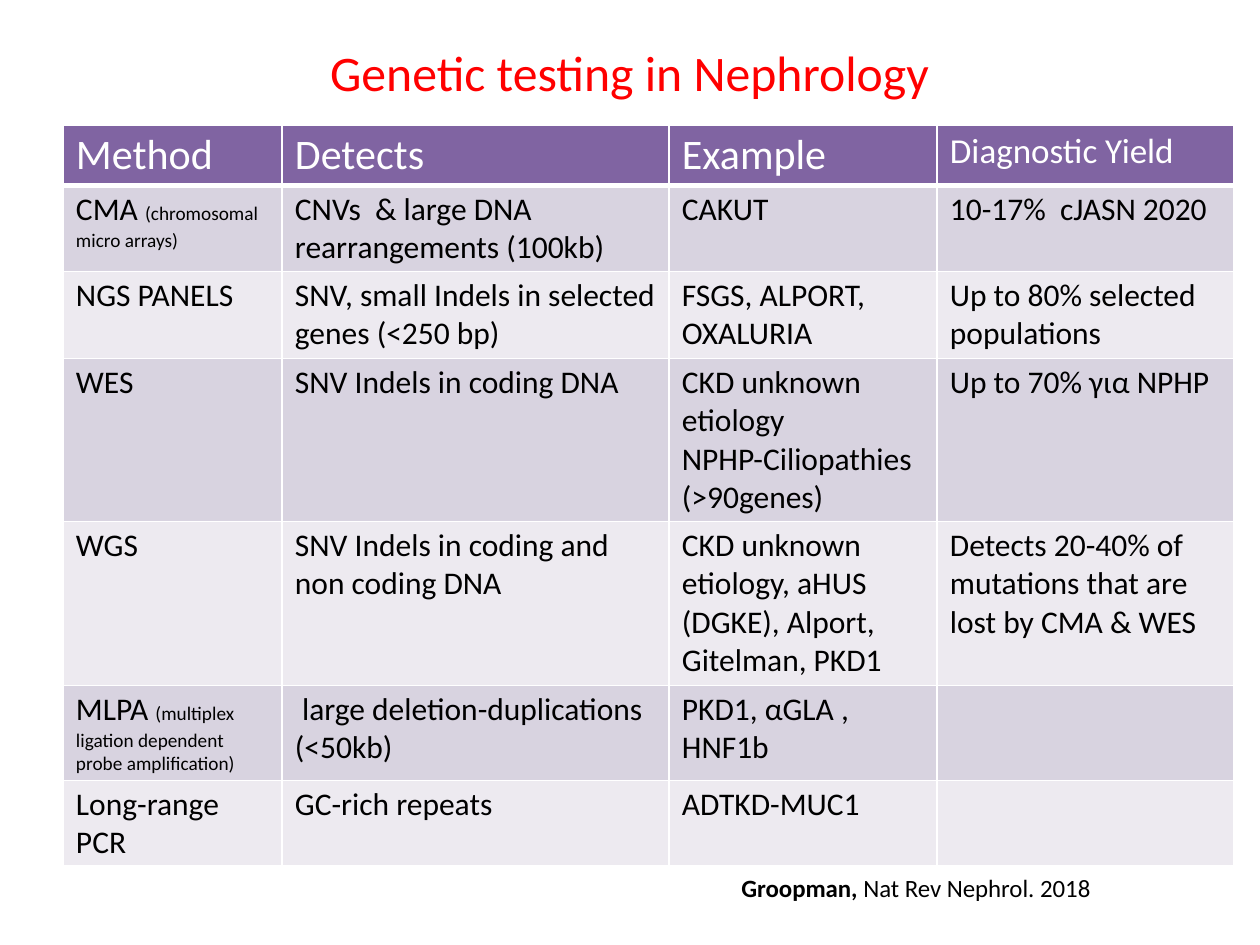
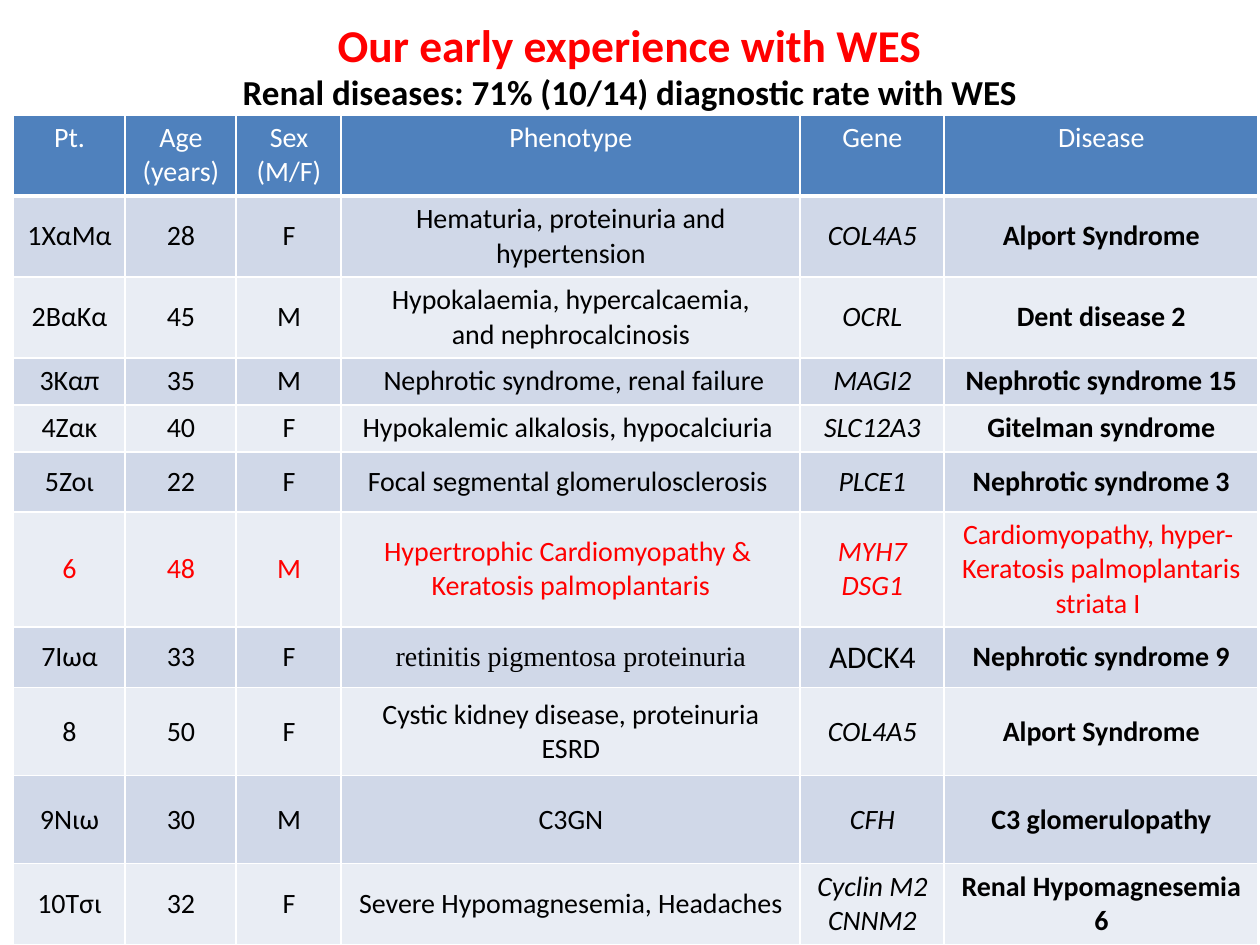
"""Build two slides of tables on genetic testing in nephrology."""

from dataclasses import dataclass, replace

from lxml.etree import SubElement
from pptx import Presentation
from pptx.dml.color import RGBColor
from pptx.enum.text import MSO_ANCHOR as Anchor, PP_ALIGN as Align
from pptx.oxml.ns import qn
from pptx.util import Emu, Pt

PX = 914400 / 126
RED = RGBColor(0xFF, 0x00, 0x00)
BLACK = RGBColor(0x00, 0x00, 0x00)
WHITE = RGBColor(0xFF, 0xFF, 0xFF)
PURPLE = RGBColor(0x80, 0x64, 0xA2)
PURPLE_BANDS = (RGBColor(0xD8, 0xD3, 0xE0), RGBColor(0xED, 0xEA, 0xF0))
BLUE = RGBColor(0x4F, 0x81, 0xBD)
BLUE_BANDS = (RGBColor(0xD0, 0xD8, 0xE8), RGBColor(0xE9, 0xED, 0xF4))
SANS = "Calibri"
SERIF = "Times New Roman"


@dataclass(frozen=True)
class Cell:
    """Text of a table cell, its format and an optional small note."""

    text: str
    size: float = 18
    color: RGBColor = BLACK
    bold: bool = False
    italic: bool = False
    font: str = SANS
    note: str = ""


@dataclass(frozen=True)
class TableStyle:
    """Look and geometry of a banded table."""

    left: int
    top: int
    columns: tuple[int, ...]
    heights: tuple[int, ...]
    header: RGBColor
    bands: tuple[RGBColor, RGBColor]
    inset: int
    align: Align = Align.LEFT
    anchor: Anchor = Anchor.TOP


@dataclass(frozen=True)
class Patient:
    """One diagnosed patient."""

    label: str
    age: int
    sex: str
    phenotype: str
    gene: str
    disease: str


def px(length: int) -> Emu:
    """Turn pixels into EMU."""
    return Emu(round(length * PX))


def write(frame, text: str, *, size: float, color: RGBColor = BLACK, bold: bool = False,
          italic: bool = False, font: str = SANS, align: Align = Align.LEFT,
          append: bool = False) -> None:
    """Write one paragraph per line, or append a span to the last paragraph."""
    for index, line in enumerate(text.split("\n")):
        para = frame.add_paragraph() if index else frame.paragraphs[-1]
        if not append:
            para.alignment = align
        span = para.add_run()
        span.text = line
        span.font.name = font
        span.font.size = Pt(size)
        span.font.bold = bold
        span.font.italic = italic
        span.font.color.rgb = color


def add_box(page, left: int, top: int, width: int, height: int, *,
            anchor: Anchor = Anchor.TOP, wrap: bool = True):
    """Add a text box and return its text frame."""
    frame = page.shapes.add_textbox(px(left), px(top), px(width), px(height)).text_frame
    frame.word_wrap = wrap
    frame.vertical_anchor = anchor
    return frame


def add_borders(cell, bottom: int) -> None:
    """Draw white borders around a cell."""
    properties = cell._tc.get_or_add_tcPr()
    for side, width in (("L", 1), ("R", 1), ("T", 1), ("B", bottom)):
        line = SubElement(properties, qn(f"a:ln{side}"), w=str(Pt(width)))
        fill = SubElement(line, qn("a:solidFill"))
        SubElement(fill, qn("a:srgbClr"), val=str(WHITE))


def add_table(page, style: TableStyle, rows: list[list[Cell]]) -> None:
    """Draw a table with a header row and alternating bands."""
    table = page.shapes.add_table(
        len(rows), len(style.columns), px(style.left), px(style.top),
        px(sum(style.columns)), px(sum(style.heights))).table
    for column, width in zip(table.columns, style.columns):
        column.width = px(width)
    for index, (row, height, entries) in enumerate(zip(table.rows, style.heights, rows)):
        row.height = px(height)
        for cell, entry in zip(row.cells, entries):
            add_borders(cell, 1 if index else 3)
            cell.fill.solid()
            cell.fill.fore_color.rgb = style.bands[(index - 1) % 2] if index else style.header
            cell.margin_left, cell.margin_right = px(13), px(12)
            cell.margin_top = cell.margin_bottom = px(style.inset)
            cell.vertical_anchor = style.anchor if index else Anchor.TOP
            if entry.text:
                write(cell.text_frame, entry.text, size=entry.size, color=entry.color,
                      bold=entry.bold, italic=entry.italic, font=entry.font, align=style.align)
            if entry.note:
                write(cell.text_frame, entry.note, size=11, append=True)


METHOD_STYLE = TableStyle(
    63, 125, (219, 387, 268, 297), (60, 86, 87, 163, 164, 95, 86), PURPLE, PURPLE_BANDS, 5)
METHOD_HEADER = [Cell(name, 24, WHITE) for name in ("Method", "Detects", "Example")]
METHOD_HEADER.append(Cell("Diagnostic Yield", 20, WHITE))
METHOD_NOTES = {
    "CMA ": "(chromosomal micro arrays)",
    "MLPA ": "(multiplex ligation dependent probe amplification)",
}
METHODS = (
    ("CMA ", "CNVs  & large DNA rearrangements (100kb)", "CAKUT", "10-17%  cJASN 2020"),
    ("NGS PANELS", "SNV, small Indels in selected genes (<250 bp)",
     "FSGS, ALPORT, OXALURIA", "Up to 80% selected populations"),
    ("WES", "SNV Indels in coding DNA",
     "CKD unknown etiology\nNPHP-Ciliopathies (>90genes)", "Up to 70% για ΝPHP"),
    ("WGS", "SNV Indels in coding and non coding DNA",
     "CKD unknown etiology, aHUS (DGKE), Alport, Gitelman, PKD1",
     "Detects 20-40% of mutations that are lost by CMA & WES"),
    ("MLPA ", " large deletion-duplications (<50kb)", "PKD1, αGLA , HNF1b", ""),
    ("Long-range PCR", "GC-rich repeats", "ADTKD-MUC1", ""),
)

PATIENT_STYLE = TableStyle(
    13, 115, (112, 111, 105, 459, 144, 314), (81, 81, 81, 47, 47, 60, 115, 61, 88, 88, 81),
    BLUE, BLUE_BANDS, 6, Align.CENTER, Anchor.MIDDLE)
PATIENT_HEADER = [
    Cell(name, 16, WHITE)
    for name in ("Pt.", "Age (years)", "Sex (M/F)", "Phenotype", "Gene", "Disease")]
PATIENTS = (
    Patient("1ΧαΜα", 28, "F", "Hematuria, proteinuria and hypertension", "COL4A5",
            "Alport Syndrome"),
    Patient("2ΒαΚα", 45, "Μ", "Hypokalaemia, hypercalcaemia,\nand nephrocalcinosis", "OCRL",
            "Dent disease 2"),
    Patient("3Καπ", 35, "M", " Nephrotic syndrome, renal failure", "MAGI2",
            "Nephrotic syndrome 15"),
    Patient("4Ζακ", 40, "F", "Hypokalemic alkalosis, hypocalciuria ", "SLC12A3",
            "Gitelman syndrome"),
    Patient("5Ζοι", 22, "F", "Focal segmental glomerulosclerosis ", "PLCE1",
            "Nephrotic syndrome 3"),
    Patient("6", 48, "M", "Hypertrophic Cardiomyopathy & \nKeratosis palmoplantaris",
            "MYH7\nDSG1", "Cardiomyopathy, hyper- \nKeratosis palmoplantaris striata I "),
    Patient("7Ιωα", 33, "F", "retinitis pigmentosa proteinuria", "ADCK4",
            "Nephrotic syndrome 9"),
    Patient("8", 50, "F", "Cystic kidney disease, proteinuria ESRD", "COL4A5",
            "Alport Syndrome"),
    Patient("9Νιω", 30, "M", "C3GN", "CFH", "C3 glomerulopathy"),
    Patient("10Τσι", 32, "F", "Severe Hypomagnesemia, Headaches", "Cyclin M2 CNNM2",
            "Renal Hypomagnesemia 6"),
)


def patient_row(patient: Patient) -> list[Cell]:
    """Format a patient, with the cardiac case in red and ADCK4 set apart."""
    cardiac = patient.label == "6"
    base = Cell("", 16, RED if cardiac else BLACK)
    texts = (patient.label, str(patient.age), patient.sex, patient.phenotype)
    row = [replace(base, text=text) for text in texts]
    row.append(replace(base, text=patient.gene, italic=True))
    row.append(replace(base, text=patient.disease, bold=not cardiac))
    if patient.gene == "ADCK4":
        row[3] = replace(row[3], font=SERIF)
        row[4] = replace(row[4], size=18, italic=False)
    return row


def add_methods_page(page) -> None:
    """Compare the testing methods."""
    title = add_box(page, 63, 38, 1134, 68, anchor=Anchor.MIDDLE)
    write(title, "Genetic testing in Nephrology", size=28.4, color=RED, align=Align.CENTER)
    rows = [[Cell(text, note=METHOD_NOTES.get(text, "")) for text in row] for row in METHODS]
    add_table(page, METHOD_STYLE, [METHOD_HEADER, *rows])
    citation = add_box(page, 729, 866, 377, 42, wrap=False)
    write(citation, "Groopman, ", size=14.2, bold=True)
    write(citation, "Nat Rev Nephrol. 2018", size=14.2, append=True)


def add_patients_page(page) -> None:
    """List the diagnosed patients."""
    title = add_box(page, 0, 11, 1260, 68)
    write(title, "Our early experience with WES", size=26, color=RED, bold=True,
          align=Align.CENTER)
    subtitle = add_box(page, 0, 55, 1260, 73, anchor=Anchor.MIDDLE)
    write(subtitle, "Renal diseases: 71% (10/14) diagnostic rate with WES", size=20,
          bold=True, align=Align.CENTER)
    add_table(page, PATIENT_STYLE, [PATIENT_HEADER, *map(patient_row, PATIENTS)])


def main() -> None:
    """Build and save the deck."""
    deck = Presentation()
    deck.slide_width, deck.slide_height = px(1260), px(945)
    for add_content in (add_methods_page, add_patients_page):
        add_content(deck.slides.add_slide(deck.slide_layouts[6]))
    deck.save("out.pptx")


if __name__ == "__main__":
    main()
